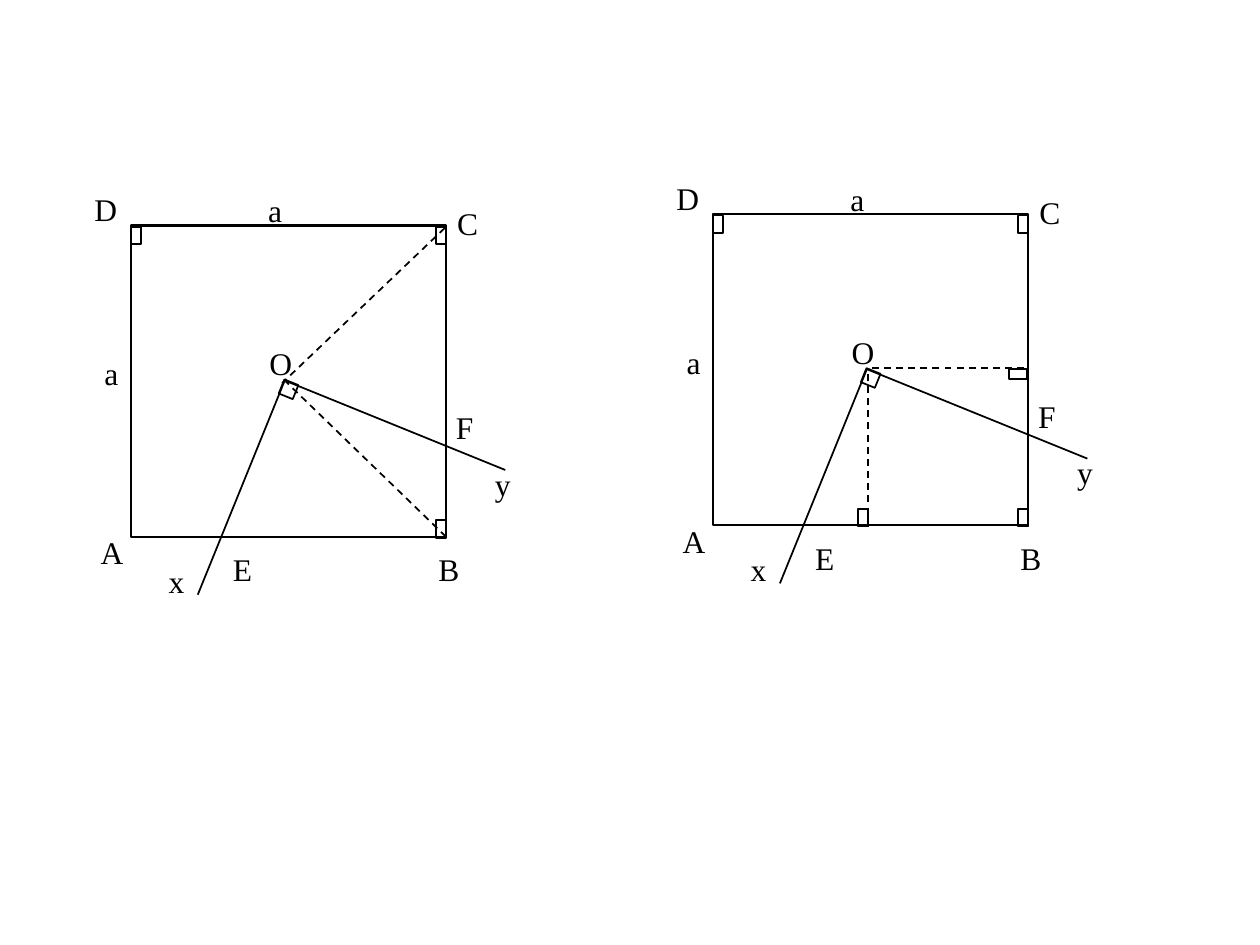
from lxml import etree
from pptx import Presentation
from pptx.dml.color import RGBColor
from pptx.enum.dml import MSO_LINE
from pptx.enum.shapes import MSO_CONNECTOR, MSO_SHAPE
from pptx.enum.text import MSO_AUTO_SIZE
from pptx.oxml.ns import qn
from pptx.util import Inches, Pt

COLORS = {"ink": "000000", "paper": "FFFFFF"}
INK = RGBColor.from_string(COLORS["ink"])
PAPER = RGBColor.from_string(COLORS["paper"])

SIDE_X, SIDE_Y = 2.5, 2.47
CENTER = (1.22, 1.23)
RAY_ENDS = [(2.97, 1.94), (0.53, 2.93)]
CORNER_MARKS = [(0, 0.01, 0), (2.42, 0.01, 0), (2.42, 2.34, 0)]
LABELS = [
    ("A", -0.34, 2.39), ("B", 2.34, 2.53), ("C", 2.49, -0.22),
    ("F", 2.48, 1.4), ("x", 0.2, 2.62), ("E", 0.71, 2.53),
    ("D", -0.39, -0.33), ("y", 2.79, 1.85), ("O", 1, 0.89),
    ("a", -0.31, 0.97), ("a", 0.99, -0.32),
]
FIGURES = [
    {
        "origin": (1.04, 1.79),
        "dashes": [((2.5, 2.47), (1.23, 1.24)), ((2.49, 0.02), (1.2, 1.25))],
        "marks": CORNER_MARKS,
    },
    {
        "origin": (5.66, 1.7),
        "dashes": [((1.23, 2.48), (1.23, 1.25)), ((2.47, 1.22), (1.22, 1.22))],
        "marks": CORNER_MARKS + [(1.15, 2.34, 0), (2.38, 1.2, 270)],
    },
]


def add_line(shapes, origin, start, end, dashed=False):
    left, top = origin
    line = shapes.add_connector(
        MSO_CONNECTOR.STRAIGHT,
        Inches(left + start[0]), Inches(top + start[1]),
        Inches(left + end[0]), Inches(top + end[1]))
    line.line.color.rgb = INK
    line.line.width = Pt(1)
    if dashed:
        line.line.dash_style = MSO_LINE.DASH
    etree.SubElement(line._element.spPr, qn("a:effectLst"))


def add_box(shapes, left, top, width, height, weight=1, turn=0):
    box = shapes.add_shape(MSO_SHAPE.RECTANGLE, Inches(left), Inches(top),
                           Inches(width), Inches(height))
    box.shadow.inherit = False
    box.fill.background()
    box.line.color.rgb = INK
    box.line.width = Pt(weight)
    box.rotation = turn
    return box


deck = Presentation()
deck.slide_width, deck.slide_height = Inches(10), Inches(7.5)
page = deck.slides.add_slide(deck.slide_layouts[6])

for figure in FIGURES:
    origin = left, top = figure["origin"]
    square = add_box(page.shapes, left, top, SIDE_X, SIDE_Y, weight=1.25)
    square.fill.solid()
    square.fill.fore_color.rgb = PAPER

    angle = page.shapes.add_group_shape()
    for ray_end in RAY_ENDS:
        add_line(angle.shapes, origin, CENTER, ray_end)
    add_box(angle.shapes, left + 1.19, top + 1.24, 0.12, 0.12, turn=112)

    for start, end in figure["dashes"]:
        add_line(page.shapes, origin, start, end, dashed=True)

    for text, across, down in LABELS:
        width = 0.47 if text == "D" else 0.51
        label = page.shapes.add_textbox(Inches(left + across), Inches(top + down),
                                        Inches(width), Inches(0.4))
        frame = label.text_frame
        frame.word_wrap = True
        frame.auto_size = MSO_AUTO_SIZE.SHAPE_TO_FIT_TEXT
        frame.text = text
        font = frame.paragraphs[0].runs[0].font
        font.name = "Times New Roman"
        font.size = Pt(18)
        font.color.rgb = INK

    for across, down, turn in figure["marks"]:
        add_box(page.shapes, left + across, top + down, 0.08, 0.14, turn=turn)

deck.save("out.pptx")
